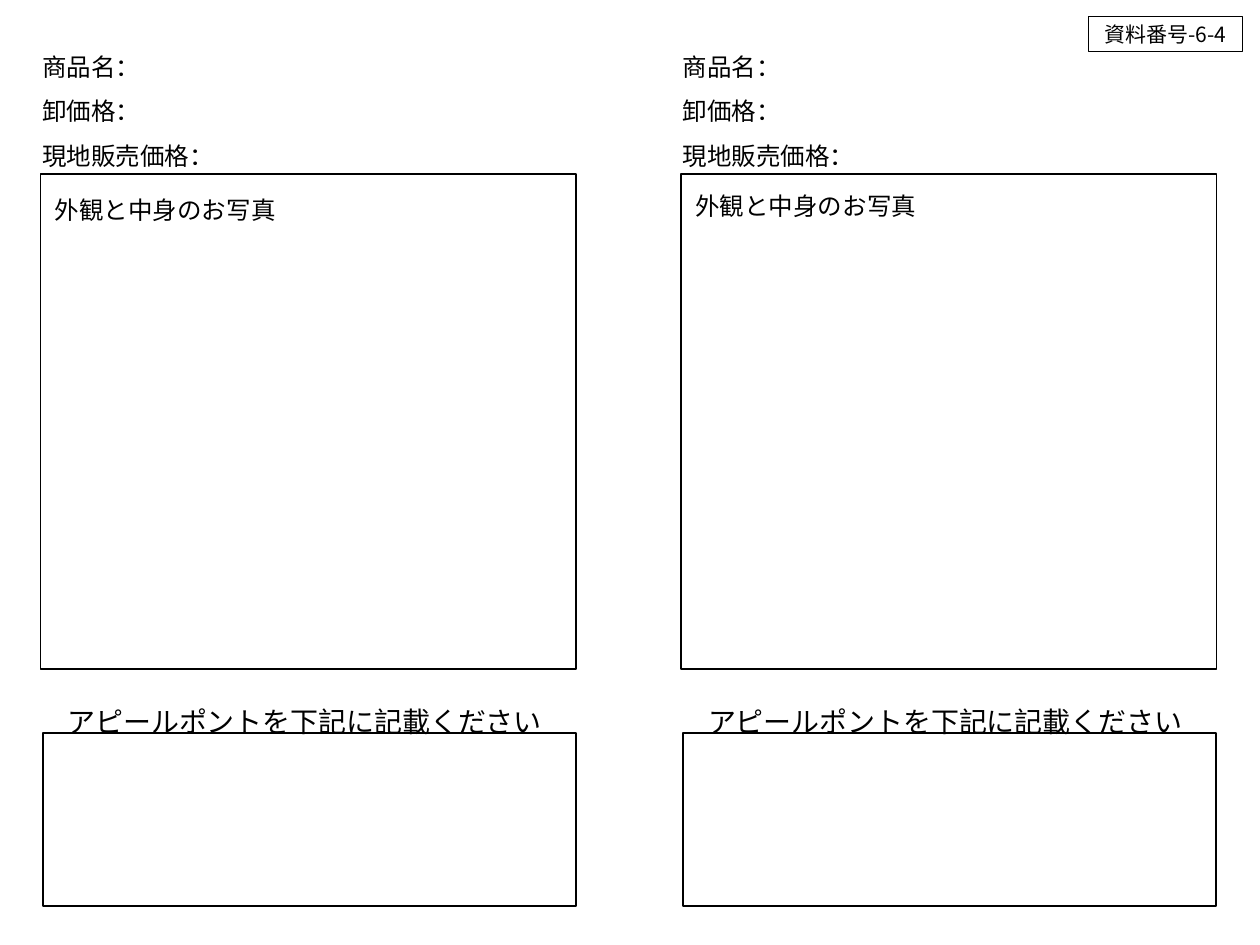
from dataclasses import dataclass

from lxml import etree
from pptx import Presentation
from pptx.dml.color import RGBColor
from pptx.enum.shapes import MSO_SHAPE
from pptx.enum.text import MSO_ANCHOR, MSO_AUTO_SIZE, PP_ALIGN
from pptx.oxml.ns import qn
from pptx.shapes.autoshape import Shape
from pptx.slide import Slide
from pptx.text.text import _Paragraph
from pptx.util import Pt

RECTANGLE = MSO_SHAPE.RECTANGLE
CENTER = PP_ALIGN.CENTER
MIDDLE = MSO_ANCHOR.MIDDLE
FIT_SHAPE = MSO_AUTO_SIZE.SHAPE_TO_FIT_TEXT
BLANK_LAYOUT = 6


@dataclass(frozen=True)
class Theme:
    font: str = "Noto Sans CJK JP"
    ink: RGBColor = RGBColor(0, 0, 0)
    paper: RGBColor = RGBColor(255, 255, 255)
    label_size: float = 14
    heading_size: float = 16
    number_size: float = 12
    frame_line: float = 1
    number_line: float = 0.75


@dataclass(frozen=True)
class Box:
    left: float
    top: float
    width: float
    height: float

    def lengths(self) -> tuple[Pt, Pt, Pt, Pt]:
        return Pt(self.left), Pt(self.top), Pt(self.width), Pt(self.height)


@dataclass(frozen=True)
class ProductColumn:
    offset: float
    caption_top: float


THEME = Theme()
COLUMNS = [ProductColumn(0, 108), ProductColumn(366, 105.8)]
PRODUCT_FIELDS = ["商品名：", "卸価格：", "現地販売価格："]
PHOTO_CAPTION = "外観と中身のお写真"
APPEAL_HEADING = "アピールポントを下記に記載ください"
DOCUMENT_NUMBER = ["資料番号", "-6-4"]


def add_run(paragraph: _Paragraph, text: str, size: float) -> None:
    run = paragraph.add_run()
    run.text = text
    run.font.size = Pt(size)
    run.font.color.rgb = THEME.ink
    run.font.name = THEME.font
    east_asian = etree.SubElement(run.font._element, qn("a:ea"))
    east_asian.set("typeface", THEME.font)


def add_lines(slide: Slide, box: Box, lines: list[str], size: float,
              spacing: float = 1.0) -> None:
    frame = slide.shapes.add_textbox(*box.lengths()).text_frame
    frame.word_wrap = False
    frame.auto_size = FIT_SHAPE
    for index, line in enumerate(lines):
        paragraph = frame.add_paragraph() if index else frame.paragraphs[0]
        paragraph.line_spacing = spacing
        add_run(paragraph, line, size)


def add_frame(slide: Slide, box: Box, line_width: float) -> Shape:
    frame = slide.shapes.add_shape(RECTANGLE, *box.lengths())
    frame.shadow.inherit = False
    frame.fill.background()
    frame.line.color.rgb = THEME.ink
    frame.line.width = Pt(line_width)
    return frame


def add_product_column(slide: Slide, column: ProductColumn) -> None:
    x = column.offset
    add_lines(slide, Box(x + 17, 18, 114, 81.4), PRODUCT_FIELDS,
              THEME.label_size, spacing=1.5)
    add_frame(slide, Box(x + 23.2, 99.4, 306, 283), THEME.frame_line)
    add_lines(slide, Box(x + 31.5, 399, 289.5, 26.6), [APPEAL_HEADING],
              THEME.heading_size)
    add_frame(slide, Box(x + 24.4, 419, 304.6, 98.6), THEME.frame_line)
    add_lines(slide, Box(x + 24.2, column.caption_top, 142, 24.4),
              [PHOTO_CAPTION], THEME.label_size)


def add_document_number(slide: Slide) -> None:
    number = add_frame(slide, Box(622, 9.6, 88, 19.8), THEME.number_line)
    number.fill.solid()
    number.fill.fore_color.rgb = THEME.paper
    text = number.text_frame
    text.word_wrap = True
    text.vertical_anchor = MIDDLE
    text.margin_left = text.margin_right = Pt(5.8)
    text.margin_top = text.margin_bottom = Pt(0.7)
    paragraph = text.paragraphs[0]
    paragraph.alignment = CENTER
    for part in DOCUMENT_NUMBER:
        add_run(paragraph, part, THEME.number_size)


def main() -> None:
    presentation = Presentation()
    presentation.slide_width = Pt(720)
    presentation.slide_height = Pt(540)
    slide = presentation.slides.add_slide(
        presentation.slide_layouts[BLANK_LAYOUT])
    for column in COLUMNS:
        add_product_column(slide, column)
    add_document_number(slide)
    presentation.save("out.pptx")


if __name__ == "__main__":
    main()
